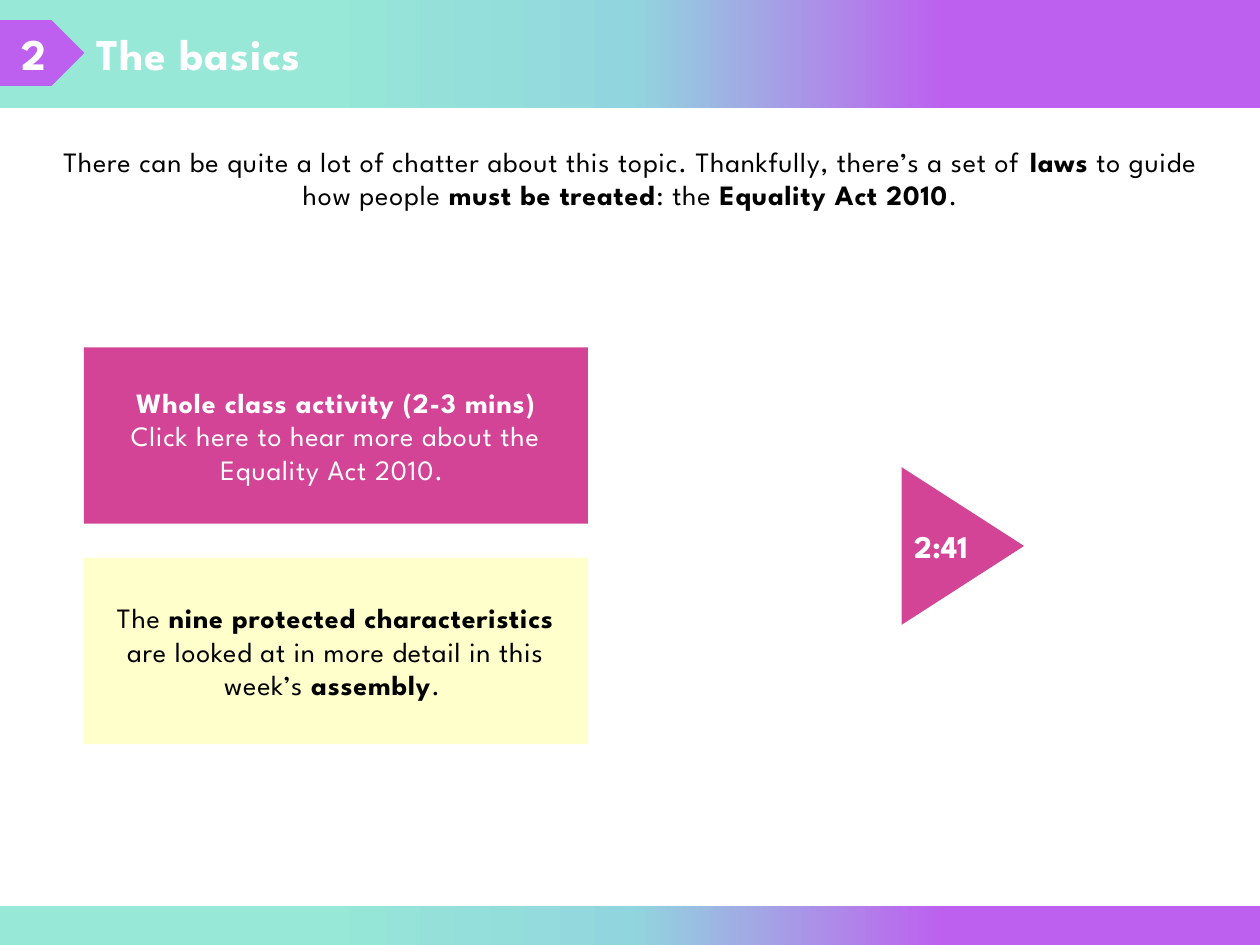
from copy import deepcopy

from pptx import Presentation
from pptx.dml.color import RGBColor
from pptx.enum.shapes import MSO_SHAPE
from pptx.enum.text import MSO_ANCHOR, PP_ALIGN
from pptx.util import Pt

RECT, ARROW = MSO_SHAPE.RECTANGLE, MSO_SHAPE.PENTAGON
TOP, MIDDLE = MSO_ANCHOR.TOP, MSO_ANCHOR.MIDDLE
LEFT, CENTER = PP_ALIGN.LEFT, PP_ALIGN.CENTER

MINT = RGBColor(0x97, 0xE8, 0xD7)
SKY = RGBColor(0x91, 0xD6, 0xDE)
VIOLET = RGBColor(0xBD, 0x60, 0xEF)
PINK = RGBColor(0xD3, 0x44, 0x97)
CREAM = RGBColor(0xFF, 0xFF, 0xCC)
WHITE = RGBColor(0xFF, 0xFF, 0xFF)
BLACK = RGBColor(0, 0, 0)
FONT = "League Spartan"


def paint(shape, color):
    shape.shadow.inherit = False
    shape.line.fill.background()
    shape.fill.solid()
    shape.fill.fore_color.rgb = color


def write(shape, lines, size, color, align=CENTER, anchor=MIDDLE,
          inset=None, spacing=0):
    """Fill a shape with lines of text; parts between ** marks are bold."""
    frame = shape.text_frame
    frame.word_wrap = True
    frame.vertical_anchor = anchor
    if inset is not None:
        frame.margin_left = frame.margin_right = Pt(inset)
        frame.margin_top = frame.margin_bottom = Pt(inset)
    for num, line in enumerate(lines):
        para = frame.add_paragraph() if num else frame.paragraphs[0]
        para.alignment = align
        para.font.name = FONT
        para.font.size = Pt(size)
        para.font.color.rgb = color
        for part, text in enumerate(line.split("**")):
            if text:
                run = para.add_run()
                run.text = text
                run.font.bold = part % 2 == 1
                if spacing:
                    run.font._element.set("spc", str(spacing))


deck = Presentation()
deck.slide_width, deck.slide_height = Pt(720), Pt(540)
slide = deck.slides.add_slide(deck.slide_layouts[6])
shapes = slide.shapes

# Gradient bands at the foot and head
for top, height in ((517.7, 22.3), (-0.7, 62.4)):
    band = shapes.add_shape(RECT, 0, Pt(top), Pt(720), Pt(height))
    band.shadow.inherit = False
    band.line.fill.background()
    band.fill.gradient()
    band.fill.gradient_angle = 0
    stops = band.fill._fill._gradFill.gsLst
    stops.append(deepcopy(stops[-1]))
    colors = (MINT, SKY, VIOLET)
    for stop, color, place in zip(band.fill.gradient_stops, colors,
                                  (0.25, 0.5, 0.75)):
        stop.color.rgb = color
        stop.position = place

# Numbered heading
badge = shapes.add_shape(ARROW, 0, Pt(11.5), Pt(48.2), Pt(37.6))
paint(badge, VIOLET)
write(badge, ["**2**"], 25, WHITE)

title = shapes.add_textbox(Pt(48.2), Pt(11.5), Pt(620.6), Pt(37.6))
write(title, ["**The basics**"], 25, WHITE, LEFT, TOP, spacing=50)

intro = shapes.add_textbox(Pt(23), Pt(75), Pt(674), Pt(53.3))
write(intro, ["There can be quite a lot of chatter about this topic. "
              "Thankfully, there’s a set of **laws** to guide how people "
              "**must be treated**: the **Equality Act 2010**."],
      16, BLACK, inset=7.2, spacing=50)

# Play button with the running time
pen = shapes.build_freeform(Pt(515.3), Pt(267))
pen.add_line_segments([(Pt(585.2), Pt(312)), (Pt(515.3), Pt(357))])
play = pen.convert_to_shape()
paint(play, PINK)
write(play, ["**2:41**"], 18, WHITE, LEFT)

# Activity and assembly cards
cards = (
    (198.5, 100.8, PINK, WHITE,
     ["**Whole class activity (2-3 mins)**",
      "Click here to hear more about the Equality Act 2010. "]),
    (318.7, 106.6, CREAM, BLACK,
     ["The **nine protected characteristics **are looked at in more detail "
      "in this week’s **assembly**. "]),
)
for top, height, fill, ink, lines in cards:
    card = shapes.add_shape(RECT, Pt(48), Pt(top), Pt(288), Pt(height))
    paint(card, fill)
    write(card, lines, 16, ink, inset=14.4, spacing=50)

deck.save("out.pptx")
